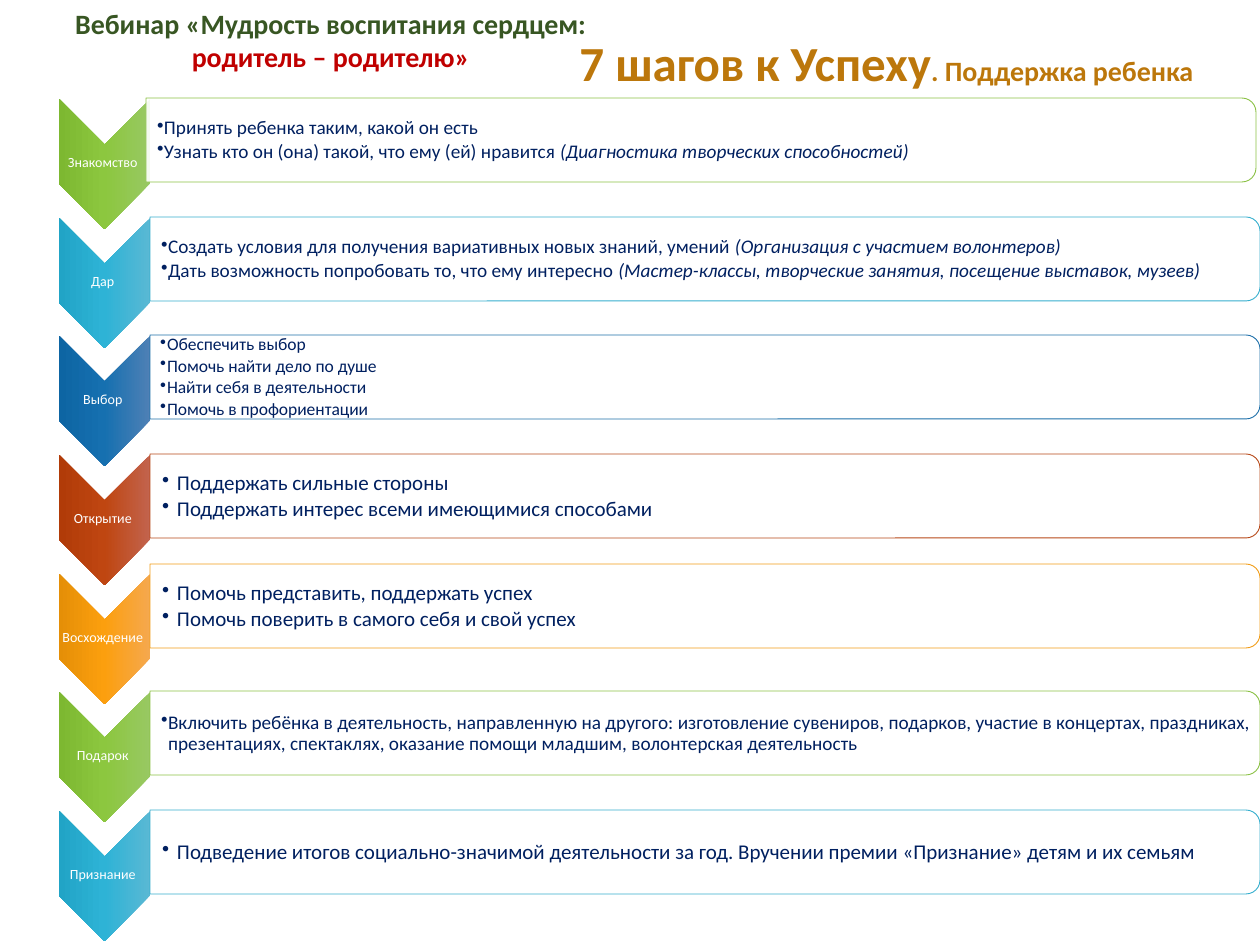
import pptx
import pptx.dml.color
import pptx.enum.shapes
import pptx.enum.text
import pptx.oxml
import pptx.oxml.ns
import pptx.util

SCALE = 914400 / 126
NAVY = "002060"
SHAPE = pptx.enum.shapes.MSO_SHAPE
ALIGN = pptx.enum.text.PP_ALIGN
MID = pptx.enum.text.MSO_ANCHOR.MIDDLE
GREEN = ("98C862", "8CC73F", "7DB831", "8BC145")
CYAN = ("59B8D4", "2EB3D6", "21A4C6", "36AFCE")
BLUE = ("4E80B5", "1670B0", "0D65A3", "1D6FA9")
RUST = ("C2634D", "BF4611", "B13B08", "B74919")
AMBER = ("F5A84E", "FC9F0E", "E58F07", "F19D19")

STEPS = [
    ("Знакомство ", GREEN, 11, 7, -4, 0, [
        ("Принять ребенка таким, какой он есть",),
        ("Узнать кто он (она) такой, что ему (ей) нравится ",
         "(Диагностика творческих способностей)")]),
    ("Дар ", CYAN, 11, 7, 0, 0, [
        ("Создать условия для получения вариативных новых знаний, умений ",
         "(Организация с участием волонтеров)"),
        ("Дать возможность попробовать то, что ему интересно ",
         "(Мастер-классы, творческие занятия, посещение выставок, музеев)")]),
    ("Выбор ", BLUE, 10, 7, 0, 0, [
        ("Обеспечить выбор",),
        ("Помочь найти дело по душе",),
        ("Найти себя в деятельности",),
        ("Помочь в профориентации",)]),
    ("Открытие ", RUST, 12, 15, 0, 0, [
        ("Поддержать сильные стороны",),
        ("Поддержать интерес всеми имеющимися способами",)]),
    ("Восхождение ", AMBER, 12, 15, 0, -9, [
        ("Помочь представить, поддержать успех",),
        ("Помочь поверить в самого себя и свой успех",)]),
    ("Подарок ", GREEN, 11, 7, 0, 0, [
        ("Включить ребёнка в деятельность, направленную на другого: "
         "изготовление сувениров, подарков, участие в концертах, праздниках, "
         "презентациях, спектаклях, оказание помощи младшим, "
         "волонтерская деятельность",)]),
    ("Признание ", CYAN, 12, 15, 0, 0, [
        ("Подведение итогов социально-значимой деятельности за год. "
         "Вручении премии «Признание» детям и их семьям",)]),
]


def px(n):
    """Turn px into EMU."""
    return pptx.util.Emu(round(n * SCALE))


def hue(code):
    """Turn a hex string into a colour."""
    return pptx.dml.color.RGBColor.from_string(code)


def node(tag, **attrs):
    """Make a drawing element with attributes."""
    part = pptx.oxml.parse_xml(f"<a:{tag} {pptx.oxml.ns.nsdecls('a')}/>")
    for key, value in attrs.items():
        part.set(key, str(value))
    return part


def turn(slide, kind, box):
    """Add a preset turned a quarter so that it covers the box."""
    x, y, w, h = box
    left, top = x + (w - h) / 2, y + (h - w) / 2
    shape = slide.shapes.add_shape(kind, px(left), px(top), px(h), px(w))
    shape.rotation = 90
    shape.shadow.inherit = False
    return shape


def frame(slide, box):
    """Add a wrapping text box and return its frame."""
    text = slide.shapes.add_textbox(*map(px, box)).text_frame
    text.word_wrap = True
    return text


def inset(text, left):
    """Centre the text upright with thin margins."""
    text.vertical_anchor = MID
    text.margin_left = px(left)
    text.margin_top = text.margin_right = text.margin_bottom = px(1)


def line(text, n):
    """Return paragraph n, adding it when it is new."""
    return text.add_paragraph() if n else text.paragraphs[0]


def write(para, words, size, code, bold=False, slant=False):
    """Add one run."""
    run = para.add_run()
    run.text = words
    font = run.font
    font.name, font.size = "Calibri", pptx.util.Pt(size)
    font.bold, font.italic = bold, slant
    font.color.rgb = hue(code)


def arrow(slide, box, name, tones):
    """Draw a shaded chevron with its label."""
    x, y, w, h = box
    shape = turn(slide, SHAPE.CHEVRON, box)
    shape.line.fill.background()
    shape.fill.gradient()
    grad = shape.fill._fill._gradFill
    grad.set("rotWithShape", "1")
    stops = grad.find(pptx.oxml.ns.qn("a:gsLst"))
    for old in list(stops):
        stops.remove(old)
    for n, tone in enumerate(tones):
        stop = node("gs", pos=n * 50000)
        stop.append(node("srgbClr", val=tone))
        stops.append(stop)
    grad.find(pptx.oxml.ns.qn("a:lin")).set("ang", "5400000")
    text = frame(slide, (x, y + 45, w, h - 91))
    inset(text, 1)
    para = text.paragraphs[0]
    para.alignment, para.line_spacing = ALIGN.CENTER, 0.9
    write(para, name, 8, "FFFFFF")


def panel(slide, box, edge, size, dent, items):
    """Draw a rounded panel with its bullets."""
    x, y, w, h = box
    shape = turn(slide, SHAPE.ROUND_2_SAME_RECTANGLE, box)
    shape.fill.solid()
    shape.fill.fore_color.rgb = hue("FFFFFF")
    tint = shape._element.spPr.find(".//" + pptx.oxml.ns.qn("a:srgbClr"))
    tint.append(node("alpha", val=90000))
    shape.line.color.rgb = hue(edge)
    shape.line.width = pptx.util.Pt(0.5)
    text = frame(slide, (x, y + 4, w - 5, h - 7))
    inset(text, size)
    for n, parts in enumerate(items):
        para = line(text, n)
        para.line_spacing = 0.9
        para.space_after = pptx.util.Pt(size * 0.15)
        props = para._p.get_or_add_pPr()
        props.set("marL", str(px(dent)))
        props.set("indent", str(-px(dent)))
        props.append(node("buChar", char="•"))
        for k, words in enumerate(parts):
            write(para, words, size, NAVY, slant=k > 0)


def step(slide, box, data):
    """Place one step: chevron on the left, panel on the right."""
    x, y, w, h = box
    name, tones, size, dent, dx, dy, items = data
    arrow(slide, (x, y, 91, h), name, tones[:3])
    spot = (x + 91 + dx, y - 1 + dy, w - 91, 84)
    panel(slide, spot, tones[3], size, dent, items)


def title(slide, box, rows):
    """Write centred bold rows of (words, size, colour) runs."""
    text = frame(slide, box)
    for n, runs in enumerate(rows):
        para = line(text, n)
        para.alignment = ALIGN.CENTER
        for words, size, code in runs:
            write(para, words, size, code, bold=True)


def main():
    """Build and save the slide."""
    deck = pptx.Presentation()
    deck.slide_width, deck.slide_height = px(1260), px(945)
    slide = deck.slides.add_slide(deck.slide_layouts[6])
    for n, data in enumerate(STEPS):
        step(slide, (59, 99 + round(n * 118.67), 1201, 130), data)
    title(slide, (0, 0, 668, 81), [
        [("Вебинар «Мудрость воспитания сердцем: ", 16, "385623")],
        [("родитель – родителю» ", 16, "C00000")]])
    title(slide, (513, 26, 747, 72), [
        [("7 шагов к Успеху", 28, "BC770B"),
         (". Поддержка ребенка", 16, "BC770B")]])
    deck.save("out.pptx")


if __name__ == "__main__":
    main()
